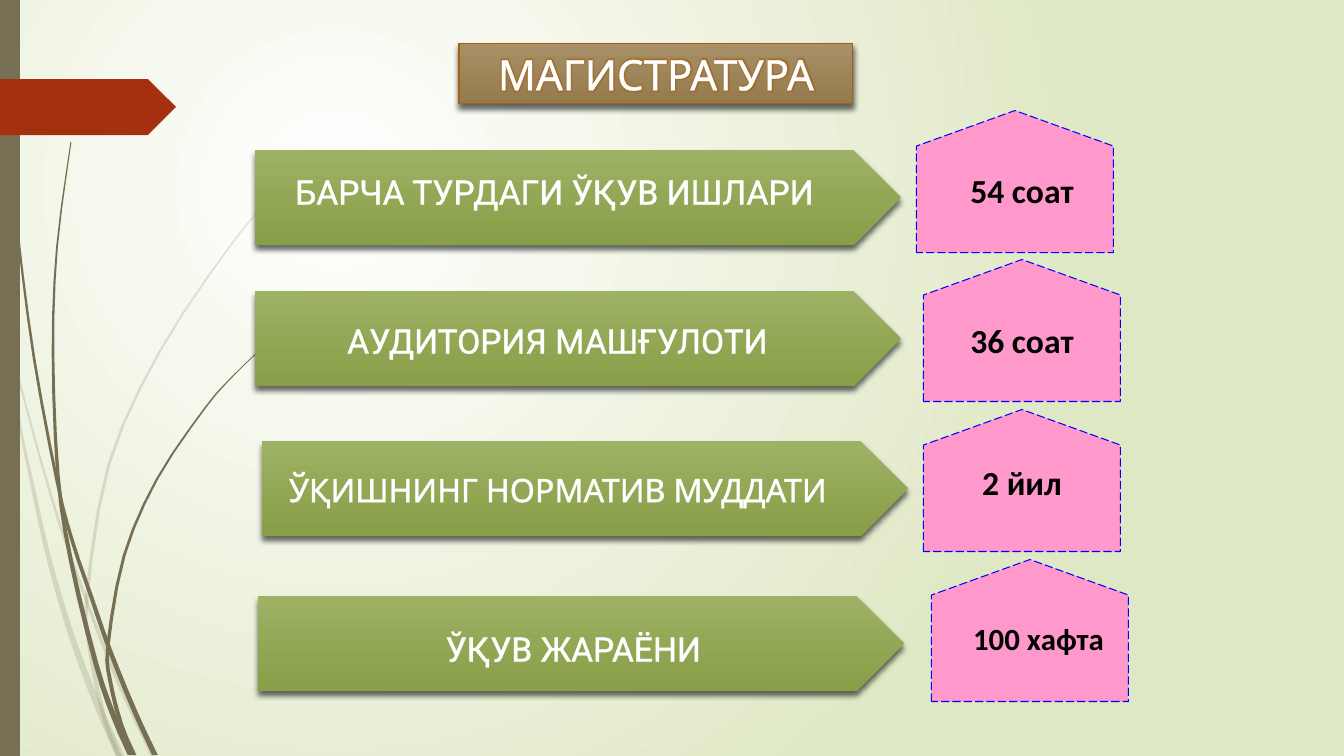
"""Build the master's degree workload slide with its wispy background."""
from lxml.etree import fromstring
from pptx import Presentation
from pptx.dml.color import RGBColor
from pptx.enum.dml import MSO_LINE
from pptx.enum.shapes import MSO_SHAPE
from pptx.enum.text import MSO_ANCHOR, PP_ALIGN
from pptx.oxml.ns import nsdecls, qn
from pptx.util import Inches, Pt

PX = Inches(7.5) / 756
COLORS = {name: RGBColor.from_string(code) for name, code in {
    "white": "FFFFFF", "black": "000000", "mist": "DFE8C4", "stem": "766F54",
    "flag": "A53010", "tan": "A89068", "brown": "947A4B", "rust": "A65E12",
    "leaf": "9DB265", "olive": "889E47", "pink": "FF99CC", "blue": "0000FF",
}.items()}


def shade(shape, top_color, bottom_color):
    shape.fill.gradient()
    shape.fill.gradient_angle = 270
    for stop, color in zip(shape.fill.gradient_stops, (top_color, bottom_color)):
        stop.color.rgb = COLORS[color]
    shape.shadow.inherit = False
    shape._element.spPr.find(qn("a:effectLst")).append(fromstring(
        f'<a:outerShdw {nsdecls("a")} blurRad="50800" dist="38100" dir="5400000" rotWithShape="0">'
        f'<a:srgbClr val="{COLORS["black"]}"><a:alpha val="60000"/></a:srgbClr></a:outerShdw>'))


def write(shape, text, size, font_name, color, outlined=True):
    frame = shape.text_frame
    frame.word_wrap = True
    frame.text = text
    paragraph = frame.paragraphs[0]
    paragraph.alignment = PP_ALIGN.CENTER
    paragraph.font.size = Pt(size)
    paragraph.font.name = font_name
    paragraph.font.bold = not outlined
    paragraph.font.color.rgb = COLORS[color]
    run_format = paragraph.runs[0]._r.get_or_add_rPr()
    if outlined:
        run_format.append(fromstring(
            f'<a:ln {nsdecls("a")} w="18415"><a:solidFill><a:srgbClr val="{COLORS[color]}"/>'
            '</a:solidFill></a:ln>'))
    return run_format


deck = Presentation()
deck.slide_width, deck.slide_height = round(1344 * PX), round(756 * PX)
slide = deck.slides.add_slide(deck.slide_layouts[5])
shapes = slide.shapes

backdrop = slide.background.fill
backdrop.gradient()
for stop, color in zip(backdrop.gradient_stops, ("white", "mist")):
    stop.color.rgb = COLORS[color]
linear = next(slide._element.iter(qn("a:lin")))
linear.getparent().replace(linear, fromstring(
    f'<a:path {nsdecls("a")} path="circle">'
    '<a:fillToRect l="50000" t="50000" r="100000" b="100000"/></a:path>'))

stems = [
    (20, 5, (1, 4), [(0, 284), (11, 347), (36, 443), (60, 525), (87, 602), (108, 657), (126, 699), (153, 756)]),
    (20, 9, (5,), [(11, 353), (20, 425), (30, 474), (47, 551), (68, 625), (93, 694), (120, 756)]),
    (20, 5, (5, 7), [(314, 154), (270, 199), (230, 246), (160, 351), (109, 464),
                     (87, 595), (90, 650), (104, 717), (119, 756)]),
    (100, 6, (4, 7), [(3, 0), (7, 110), (18, 234), (34, 358), (57, 481), (72, 540), (91, 596),
                      (109, 648), (135, 712), (155, 755)]),
    (100, 7, (3, 5), [(71, 142), (57, 247), (53, 352), (58, 476), (71, 561), (96, 664), (114, 717), (131, 755)]),
    (100, 5, (5, 7), [(263, 347), (233, 376), (205, 408), (157, 479), (124, 556),
                      (108, 645), (110, 680), (121, 724), (134, 755)]),
]
STEPS = 3
for opacity, root_width, joints, spine in stems:
    padded = [spine[0], *spine, spine[-1]]
    curve = []
    for before, start, end, after in zip(padded, padded[1:], padded[2:], padded[3:]):
        for step in range(STEPS):
            t = step / STEPS
            curve.append([b + (c - a) * t / 2 + (2 * a - 5 * b + 4 * c - d) * t ** 2 / 2
                          + (3 * b - a - 3 * c + d) * t ** 3 / 2
                          for a, b, c, d in zip(before, start, end, after)])
    curve.append(spine[-1])
    halves = [(1 + (root_width - 1) * i / len(curve)) / 2 for i in range(len(curve))]
    left_edge = [((x - half) * PX, y * PX) for (x, y), half in zip(curve, halves)]
    right_edge = [((x + half) * PX, y * PX) for (x, y), half in zip(curve, halves)]
    for first, last in zip((0, *joints), (*joints, len(spine) - 1)):
        piece = slice(first * STEPS, last * STEPS + 1)
        outline = left_edge[piece] + right_edge[piece][::-1]
        builder = shapes.build_freeform(*outline[0])
        builder.add_line_segments(outline[1:], close=True)
        stem = builder.convert_to_shape()
        stem.shadow.inherit = False
        stem.fill.solid()
        stem.fill.fore_color.rgb = COLORS["stem"]
        stem.line.fill.background()
        stem._element.spPr.find(qn("a:solidFill"))[0].append(
            fromstring(f'<a:alpha {nsdecls("a")} val="{opacity * 1000}"/>'))

for kind, top, width, height, color in [
    (MSO_SHAPE.RECTANGLE, 0, 20, 756, "stem"),
    (MSO_SHAPE.PENTAGON, 79, 176, 56, "flag"),
]:
    trim = shapes.add_shape(kind, 0, round(top * PX), round(width * PX), round(height * PX))
    trim.shadow.inherit = False
    trim.fill.solid()
    trim.fill.fore_color.rgb = COLORS[color]
    trim.line.fill.background()

heading = shapes.title
heading.left, heading.top, heading.width, heading.height = [round(v * PX) for v in (459, 43, 394, 61)]
shade(heading, "tan", "brown")
heading.line.color.rgb = COLORS["rust"]
heading.line.width = Pt(0.75)
heading.text_frame.vertical_anchor = MSO_ANCHOR.MIDDLE
heading_format = write(heading, "МАГИСТРАТУРА", 30, "League Spartan", "white")
heading_format.append(fromstring(
    f'<a:effectLst {nsdecls("a")}><a:glow rad="38100"><a:srgbClr val="{COLORS["rust"]}">'
    '<a:alpha val="60000"/></a:srgbClr></a:glow></a:effectLst>'))

rows = [
    ("БАРЧА ТУРДАГИ ЎҚУВ ИШЛАРИ", 24, "Roboto", (255, 150), (255, 166, 599),
     "54 соат", 24, (944, 83), (955, 165, 134)),
    ("АУДИТОРИЯ МАШҒУЛОТИ", 24, "Roboto", (255, 291), (270, 315, 575),
     "36 соат", 24, (951, 232), (955, 315, 134)),
    ("ЎҚИШНИНГ НОРМАТИВ МУДДАТИ ", 23, "League Spartan", (262, 441), (278, 465, 568),
     "2 йил", 24, (951, 382), (955, 457, 134)),
    ("ЎҚУВ ЖАРАЁНИ ", 24, "Roboto", (258, 596), (278, 623, 599),
     "100 хафта", 22, (959, 532), (956, 615, 165)),
]
for topic, topic_size, topic_font, arrow_at, topic_at, amount, amount_size, house_at, amount_at in rows:
    house = shapes.add_shape(MSO_SHAPE.PENTAGON, *[round(v * PX) for v in (*house_at, 142, 197)])
    house.rotation = 270
    house.adjustments[0] = 0.25
    house.shadow.inherit = False
    house.fill.solid()
    house.fill.fore_color.rgb = COLORS["pink"]
    house.line.color.rgb = COLORS["blue"]
    house.line.width = Pt(0.75)
    house.line.dash_style = MSO_LINE.LONG_DASH

    arrow = shapes.add_shape(MSO_SHAPE.PENTAGON, *[round(v * PX) for v in (*arrow_at, 646, 95)])
    shade(arrow, "leaf", "olive")
    arrow.line.fill.background()

    topic_box = shapes.add_textbox(*[round(v * PX) for v in (*topic_at, 50)])
    write(topic_box, topic, topic_size, topic_font, "white")
    amount_box = shapes.add_textbox(*[round(v * PX) for v in (*amount_at, 51)])
    write(amount_box, amount, amount_size, "Calibri", "black", outlined=False)

deck.save("out.pptx")
